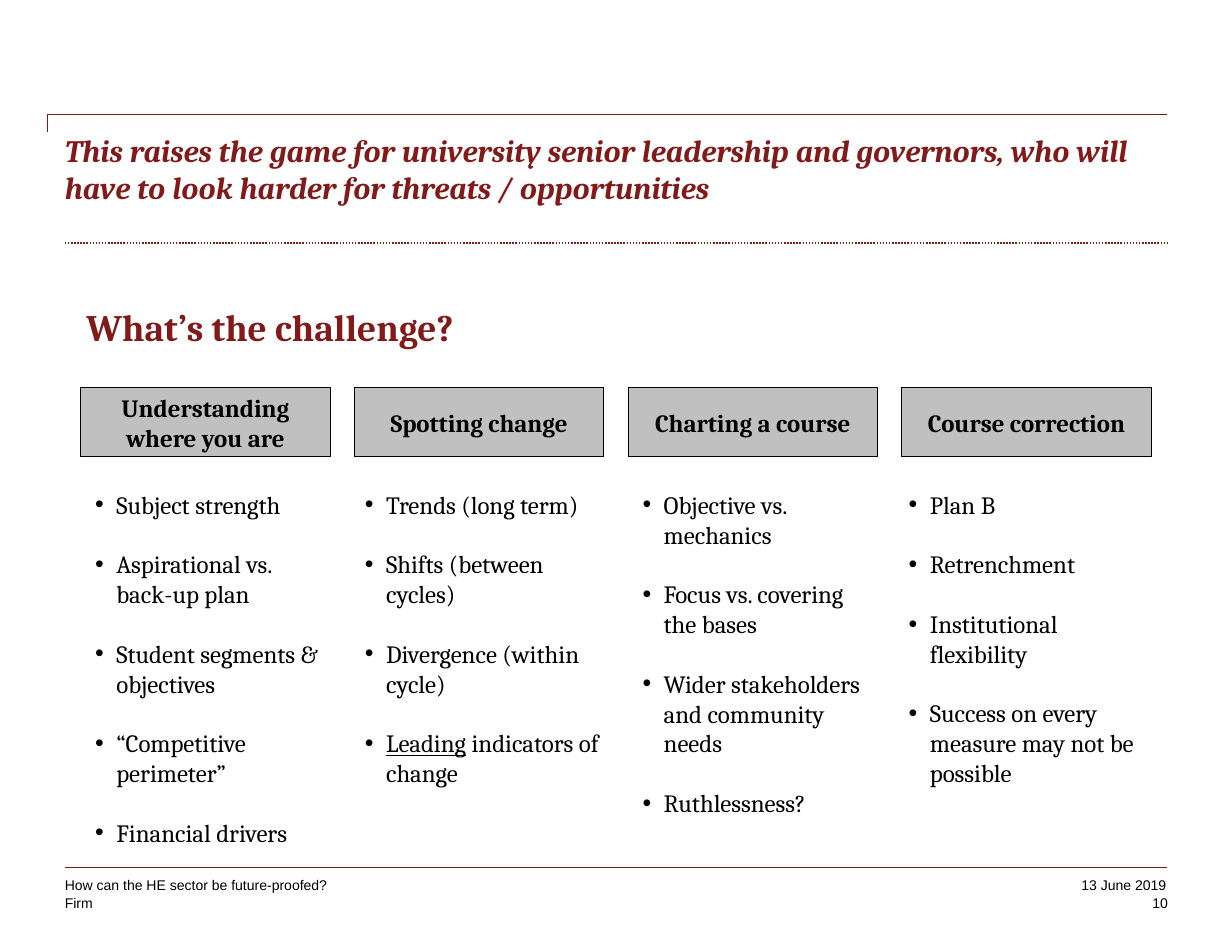
from collections import namedtuple
from dataclasses import dataclass

from lxml.etree import SubElement
from pptx import Presentation
from pptx.dml.color import RGBColor
from pptx.enum.dml import MSO_LINE
from pptx.enum.shapes import MSO_CONNECTOR as Route, MSO_SHAPE
from pptx.enum.text import MSO_ANCHOR as Anchor, PP_ALIGN as Align
from pptx.oxml.ns import qn
from pptx.util import Cm, Pt

Box = namedtuple("Box", "left top width height")


@dataclass(frozen=True)
class Theme:
    accent: RGBColor = RGBColor(0x82, 0x1A, 0x1A)
    ink: RGBColor = RGBColor(0, 0, 0)
    panel: RGBColor = RGBColor(0xC0, 0xC0, 0xC0)
    serif: str = "Cambria"
    sans: str = "Arial"
    heading: Pt = Pt(24)
    title: Pt = Pt(20)
    body: Pt = Pt(16)
    small: Pt = Pt(9)
    item_gap: Pt = Pt(19.15)


THEME = Theme()

COLUMNS = [
    ("Understanding where you are", 0.33, [
        "Subject strength", "Aspirational vs. back-up plan",
        "Student segments & objectives", "“Competitive perimeter”",
        "Financial drivers"]),
    ("Spotting change", 0.24, [
        "Trends (long term)", "Shifts (between cycles)",
        "Divergence (within cycle)", ("Leading", " indicators of change")]),
    ("Charting a course", 0.33, [
        "Objective vs. mechanics", "Focus vs. covering the bases",
        "Wider stakeholders and community needs", "Ruthlessness?"]),
    ("Course correction", 0.16, [
        "Plan B", "Retrenchment", "Institutional flexibility",
        "Success on every measure may not be possible"]),
]


def style(paragraph, size, color, face=THEME.serif, bold=False, italic=False):
    font = paragraph.font
    font.size, font.name = size, face
    font.bold, font.italic = bold, italic
    font.color.rgb = color


def add_frame(slide, box, wrap=True, anchor=Anchor.TOP):
    frame = slide.shapes.add_textbox(*map(Cm, box)).text_frame
    frame.margin_left = frame.margin_right = 0
    frame.margin_top = frame.margin_bottom = 0
    frame.word_wrap = wrap
    frame.vertical_anchor = anchor
    return frame


def add_rule(slide, start, end, width=0.75, route=Route.STRAIGHT):
    rule = slide.shapes.add_connector(route, *map(Cm, (*start, *end)))
    rule.line.color.rgb = THEME.accent
    rule.line.width = Pt(width)
    SubElement(rule._element.spPr, qn("a:effectLst"))
    return rule


def add_title(slide, box):
    right = box.left + box.width
    bracket = add_rule(slide, (box.left - 0.4, box.top + 0.03),
                       (right, box.top - 0.38), route=Route.ELBOW)
    geometry = bracket._element.spPr.find(qn("a:prstGeom"))
    SubElement(geometry.find(qn("a:avLst")), qn("a:gd"),
               name="adj1", fmla="val 0")
    base = box.top + 2.54
    dotted = add_rule(slide, (box.left, base), (right, base), 1)
    dotted.line.dash_style = MSO_LINE.ROUND_DOT

    headline = add_frame(slide, box).paragraphs[0]
    headline.text = ("This raises the game for university senior leadership and "
                     "governors, who will have to look harder for threats / "
                     "opportunities")
    style(headline, THEME.title, THEME.accent, bold=True, italic=True)


def add_question(slide, box):
    question = add_frame(slide, box).paragraphs[0]
    question.text = "What’s the challenge?"
    question.line_spacing = 1.5
    style(question, THEME.heading, THEME.accent, bold=True)


def add_header(slide, box, label):
    header = slide.shapes.add_shape(MSO_SHAPE.RECTANGLE, *map(Cm, box))
    header.shadow.inherit = False
    header.fill.solid()
    header.fill.fore_color.rgb = THEME.panel
    header.line.color.rgb = THEME.ink
    header.line.width = Pt(0.5)
    header.text_frame.word_wrap = True
    header.text_frame.vertical_anchor = Anchor.MIDDLE
    caption = header.text_frame.paragraphs[0]
    caption.text = label
    caption.alignment = Align.CENTER
    style(caption, THEME.body, THEME.ink, bold=True)


def add_bullets(slide, box, items):
    frame = add_frame(slide, box)
    for index, item in enumerate(items):
        point = frame.add_paragraph() if index else frame.paragraphs[0]
        if index:
            point.space_before = THEME.item_gap
        properties = point._p.get_or_add_pPr()
        properties.set("marL", str(Cm(0.48)))
        properties.set("indent", str(-Cm(0.48)))
        SubElement(properties, qn("a:buFont"), typeface=THEME.sans)
        SubElement(properties, qn("a:buChar"), char="•")
        if isinstance(item, tuple):
            stressed, rest = item
            run = point.add_run()
            run.text = stressed
            run.font.underline = True
            point.add_run().text = rest
        else:
            point.add_run().text = item
        style(point, THEME.body, THEME.ink)


def add_columns(slide, box):
    header_width = 5.66
    pitch = (box.width - header_width) / (len(COLUMNS) - 1)
    for index, (label, inset, items) in enumerate(COLUMNS):
        left = box.left + index * pitch
        add_header(slide, Box(left, box.top, header_width, 1.57), label)
        add_bullets(slide, Box(left + inset, box.top + 2.31, 5.33,
                               box.height - 2.31), items)


def add_footer(slide, box):
    right = box.left + box.width
    add_rule(slide, (box.left, box.top), (right, box.top))
    upper, lower = box.top + 0.2, box.top + 0.64
    notes = [
        ("How can the HE sector be future-proofed?",
         Box(box.left, upper, 8.05, 0.38), Align.LEFT, True, Anchor.BOTTOM, None),
        ("Firm", Box(box.left, lower, 0.76, 0.3),
         Align.LEFT, False, Anchor.TOP, Pt(10)),
        ("13 June 2019", Box(right - 1.95, upper, 1.93, 0.38),
         Align.RIGHT, False, Anchor.TOP, None),
        ("10", Box(right - 0.87, lower, 0.89, 0.43),
         Align.RIGHT, False, Anchor.TOP, Pt(10)),
    ]
    for wording, place, alignment, wrap, anchor, spacing in notes:
        note = add_frame(slide, place, wrap, anchor).paragraphs[0]
        note.text = wording
        note.alignment = alignment
        note.line_spacing = spacing
        style(note, THEME.small, THEME.ink, THEME.sans)


def main():
    deck = Presentation()
    deck.slide_width, deck.slide_height = Cm(27.94), Cm(21.59)
    slide = deck.slides.add_slide(deck.slide_layouts[6])
    add_title(slide, Box(1.47, 2.97, 25, 2.34))
    add_question(slide, Box(1.96, 6.4, 22.1, 12.57))
    add_columns(slide, Box(1.83, 8.79, 24.28, 11.2))
    add_footer(slide, Box(1.47, 19.68, 25, 1.1))
    deck.save("out.pptx")


if __name__ == "__main__":
    main()
